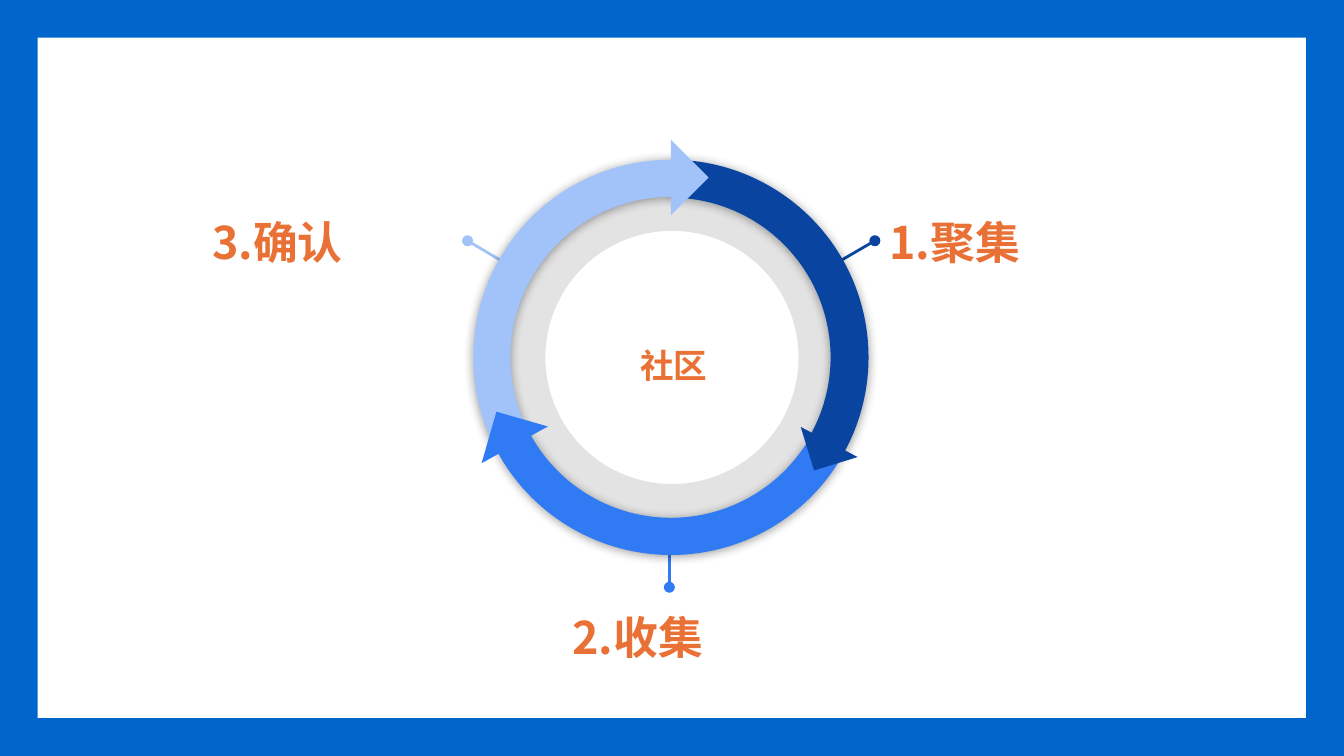
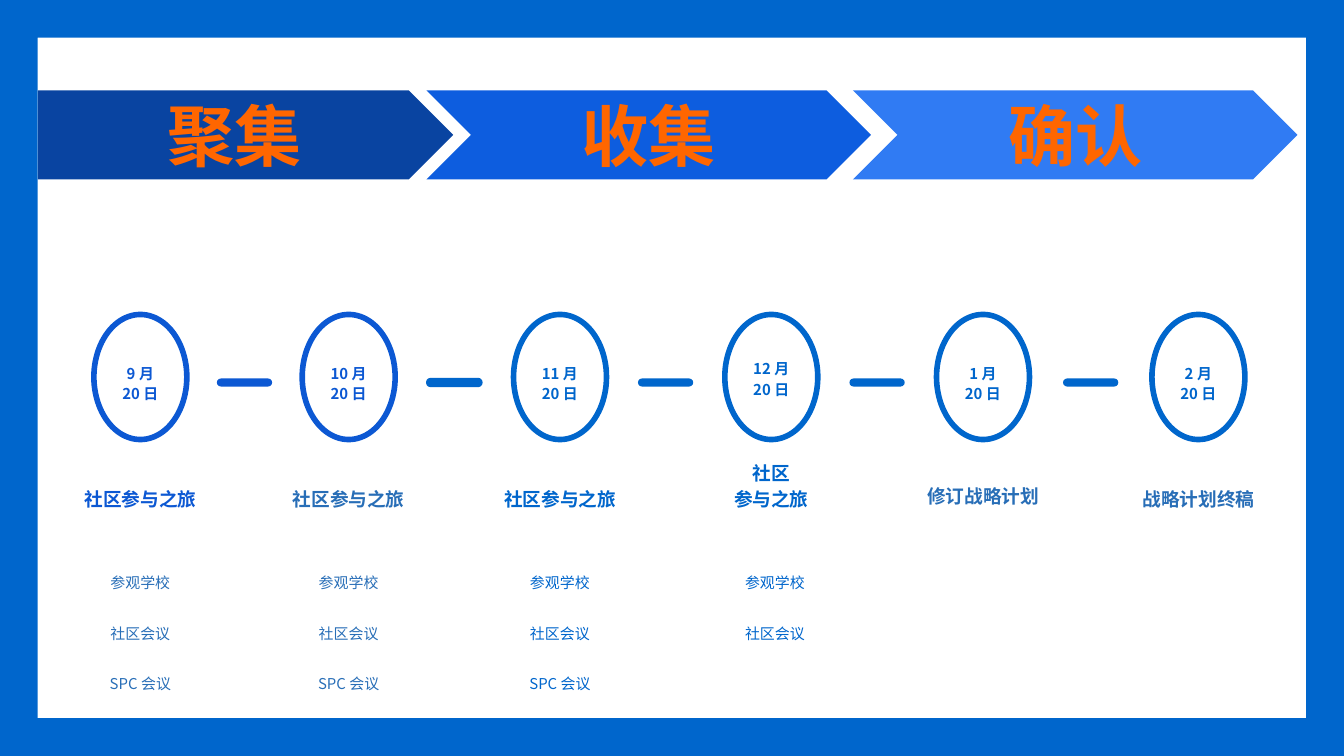
import pptx
import pptx.util
import pptx.dml.color
import pptx.enum.shapes
import pptx.enum.text
import pptx.oxml.ns
from lxml import etree

Pt = pptx.util.Pt
Kind = pptx.enum.shapes.MSO_SHAPE
Align = pptx.enum.text.PP_ALIGN
Anchor = pptx.enum.text.MSO_ANCHOR

HUES = {
    "frame": "0066CC",
    "black": "000000",
    "navy": "0944A1",
    "royal": "0D5DDF",
    "blue": "307BF3",
    "pale": "A1C3FA",
    "rust": "E97135",
    "orange": "FF6600",
    "deep": "0C58D3",
    "steel": "286EB7",
}


def tag(parent, name, **values):
    node = etree.SubElement(parent, pptx.oxml.ns.qn(name))
    for key, value in values.items():
        node.set(key, str(value))
    return node


class Deck:
    font = "Noto Sans CJK SC"
    inset = 7.2
    wide, high = 720, 405

    def __init__(self):
        self.file = pptx.Presentation()
        self.file.slide_width = Pt(self.wide)
        self.file.slide_height = Pt(self.high)
        self.slide = None

    def hue(self, name):
        return pptx.dml.color.RGBColor.from_string(HUES[name])

    def page(self):
        self.slide = self.file.slides.add_slide(self.file.slide_layouts[6])
        self.shape(Kind.FRAME, (0, 0, self.wide, self.high), "frame", adj=[0.05])

    def shape(self, kind, box, fill=None, line=None, width=1, adj=(), turn=0):
        item = self.slide.shapes.add_shape(kind, *map(Pt, box))
        item.shadow.inherit = False
        item.rotation = turn
        for i, value in enumerate(adj):
            item.adjustments[i] = value
        if fill:
            item.fill.solid()
            item.fill.fore_color.rgb = self.hue(fill)
        else:
            item.fill.background()
        if line:
            item.line.color.rgb = self.hue(line)
            item.line.width = Pt(width)
        else:
            item.line.fill.background()
        return item

    def ring(self, box, fill, adj, alpha):
        item = self.shape(Kind.DONUT, box, fill, adj=adj)
        color = item._element.spPr.find(".//" + pptx.oxml.ns.qn("a:srgbClr"))
        tag(color, "a:alpha", val=alpha * 1000)

    def arc(self, box, fill, adj, turn, flip):
        item = self.shape(Kind.BLOCK_ARC, box, fill, adj=adj, turn=turn)
        props = item._element.spPr
        if flip:
            props.find(pptx.oxml.ns.qn("a:xfrm")).set("flipH", "1")
        glow = tag(props.find(pptx.oxml.ns.qn("a:effectLst")), "a:outerShdw",
                   blurRad=Pt(5.6), dist=Pt(0.8), dir=90 * 60000, rotWithShape=0)
        tag(tag(glow, "a:srgbClr", val=HUES["black"]), "a:alpha", val=40000)

    def pin(self, start, end, hue):
        item = self.slide.shapes.add_connector(
            pptx.enum.shapes.MSO_CONNECTOR.STRAIGHT, *map(Pt, start + end))
        item.line.color.rgb = self.hue(hue)
        item.line.width = Pt(1.5)
        ends = item._element.spPr.find(pptx.oxml.ns.qn("a:ln"))
        tag(ends, "a:headEnd", type="oval")
        tag(item._element.spPr, "a:effectLst")

    def label(self, item, lines, size, hue, bold=True, align=Align.CENTER,
              anchor=Anchor.TOP, lead=1.15, first=0, gap=0):
        frame = item.text_frame
        sides = ("left", "right", "top", "bottom")
        form = {f"margin_{side}": Pt(self.inset) for side in sides}
        form.update(word_wrap=True, vertical_anchor=anchor)
        for key, value in form.items():
            setattr(frame, key, value)
        for i, line in enumerate(lines):
            para = frame.add_paragraph() if i else frame.paragraphs[0]
            look = {"alignment": align, "line_spacing": lead,
                    "space_before": Pt(gap if i else first)}
            for key, value in look.items():
                setattr(para, key, value)
            run = para.add_run()
            run.text = line
            run.font.color.rgb = self.hue(hue)
            face = {"name": self.font, "size": Pt(size), "bold": bold}
            for key, value in face.items():
                setattr(run.font, key, value)
            tag(run._r.get_or_add_rPr(), "a:ea", typeface=self.font)

    def text(self, box, lines, size, hue, **look):
        item = self.slide.shapes.add_textbox(*map(Pt, box))
        self.label(item, lines, size, hue, **look)


def cycle(deck):
    deck.page()
    deck.ring((260, 91.5, 200, 200), "black", [0.161], 11)
    steps = [
        ("3.确认", "pale", (250.5, 129), (284.2, 149), (106.5, 103.7, 143, 52.5)),
        ("1.聚集", "navy", (468.7, 129), (434.2, 149), (469.5, 103.7, 152.5, 52.5)),
        ("2.收集", "blue", (358.6, 314.6), (358.6, 278.6), (299.5, 315.4, 188, 52.5)),
    ]
    for name, hue, start, end, box in steps:
        deck.pin(start, end, hue)
        deck.text(box, [name], 24, "rust", align=Align.LEFT)
    deck.text((293, 162, 136, 63.4), ["社区"], 18, "rust", anchor=Anchor.MIDDLE)

    wheel = (253.6, 85.6, 211.7, 211.7)
    tip = Kind.RIGHT_TRIANGLE
    deck.arc(wheel, "navy", [144.14, 0.01, 0.096], 30, False)
    deck.arc(wheel, "pale", [143.49, 214.73, 0.094], 330, True)
    deck.shape(tip, (345, 80.7, 28.7, 28.7), "pale", turn=225)
    deck.arc(wheel, "blue", [143.16, 215.03, 0.094], 210, True)
    deck.shape(tip, (432, 224.6, 24.4, 24.4), "navy", turn=342.9)
    deck.shape(tip, (261.4, 224, 28.7, 28.7), "blue", turn=106)


def timeline(deck):
    deck.page()
    tour = ["社区参与之旅"]
    tasks = ["参观学校", "社区会议", "SPC 会议"]
    stops = [
        (75.2, "9 月 20 日", tour, tasks, "deep", "deep", "steel"),
        (186.8, "10 月 20 日", tour, tasks, "deep", "steel", "steel"),
        (300, "11 月 20 日", tour, tasks, "frame", "frame", "frame"),
        (413.2, "12 月 20 日", ["社区", "参与之旅"], tasks[:2],
         "frame", "frame", "frame"),
        (526.6, "1 月 20 日", ["修订战略计划"], [], "frame", "steel", "frame"),
        (642, "2 月 20 日", ["战略计划终稿"], [], "frame", "steel", "frame"),
    ]
    drops = {3: (-2.2, 0.5), 4: (0, -1.5)}
    for i, (mid, date, title, todo, ring, head, body) in enumerate(stops):
        lift, drop = drops.get(i, (0, 0))
        deck.shape(Kind.OVAL, (mid - 24.9, 168.5, 49.8, 67), line=ring, width=3)
        deck.text((mid - 18.4, 186.5 + lift, 36.8, 36), [date], 8, ring)
        deck.text((mid - 56, 229.7 + drop, 112, 50.4), title, 10, head,
                  anchor=Anchor.BOTTOM)
        if todo:
            shift = 2 if i == 3 else 0
            deck.text((mid - 56 + shift, 298.8, 112, 82.8), todo, 8, body,
                      bold=False, gap=16)

    for i, (one, two) in enumerate(zip(stops, stops[1:])):
        deck.shape(Kind.ROUNDED_RECTANGLE,
                   ((one[0] + two[0]) / 2 - 14.8, 202.8, 29.6, 4.3),
                   "frame" if i else "deep", line="frame" if i == 1 else None,
                   width=0.75, adj=[0.5])

    phases = [
        ("聚集", Kind.PENTAGON, 20.3, 222.5, "navy"),
        ("收集", Kind.CHEVRON, 228.4, 238.2, "royal"),
        ("确认", Kind.CHEVRON, 456.9, 238.2, "blue"),
    ]
    for name, kind, left, width, hue in phases:
        item = deck.shape(kind, (left, 48.4, width, 47.8), hue, adj=[0.5])
        deck.label(item, [name], 36, "orange", anchor=Anchor.MIDDLE,
                   lead=1, first=6)


def main():
    deck = Deck()
    cycle(deck)
    timeline(deck)
    deck.file.save("out.pptx")


if __name__ == "__main__":
    main()
